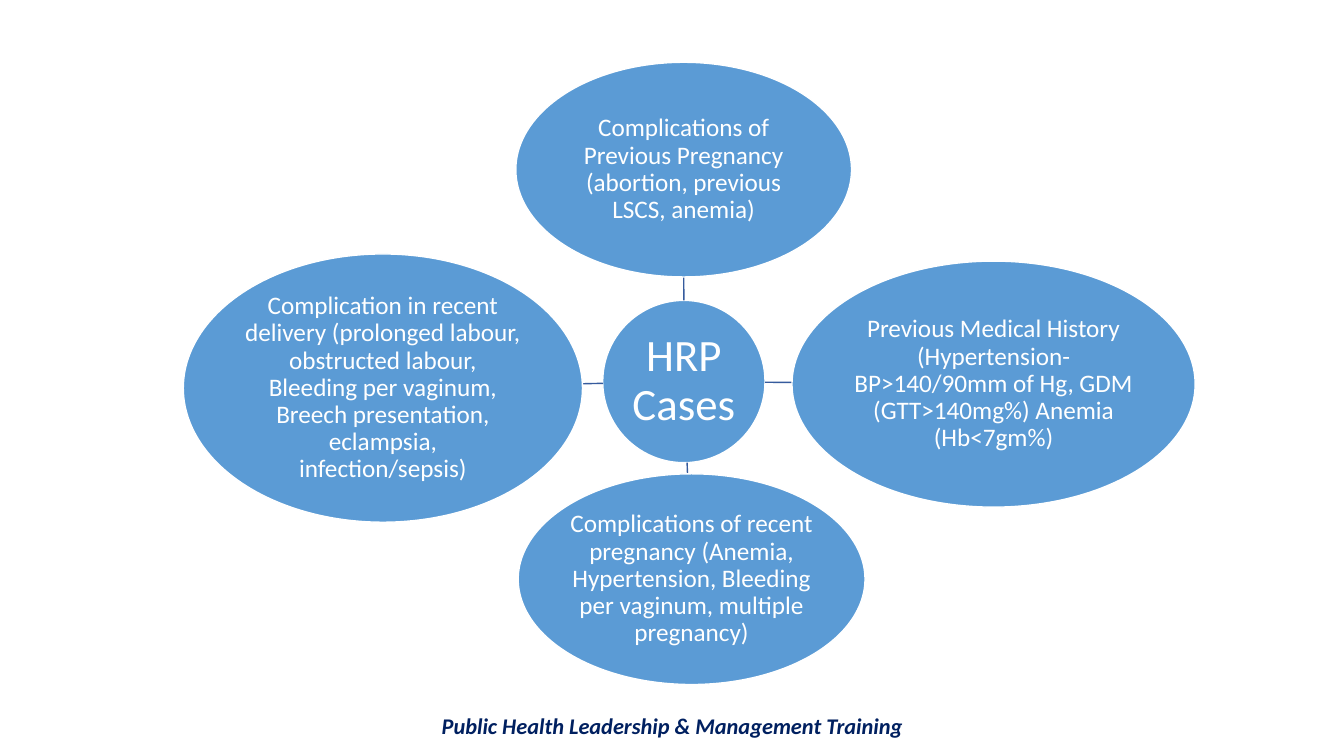
"""Build a slide of high-risk pregnancy cases as a hub with four satellites."""
from math import hypot

from lxml.etree import SubElement
from pptx import Presentation
from pptx.dml.color import RGBColor
from pptx.enum.shapes import MSO_CONNECTOR, MSO_SHAPE
from pptx.enum.text import MSO_ANCHOR, PP_ALIGN
from pptx.oxml.ns import qn
from pptx.util import Cm, Pt

COLORS = {"oval": "5B9BD5", "edge": "FFFFFF", "text": "FFFFFF", "link": "365B9D", "footer": "002060"}

HUB = ("HRP Cases", (15.19, 7.57, 4.09, 4.09))
SATELLITES = [
    ("Complications of Previous Pregnancy (abortion, previous LSCS, anemia)",
     (13.0, 1.57, 8.46, 5.41)),
    ("Previous Medical History (Hypertension-BP>140/90mm of Hg, GDM (GTT>140mg%) Anemia (Hb<7gm%)",
     (19.96, 6.58, 10.16, 6.2)),
    ("Complications of recent pregnancy (Anemia, Hypertension, Bleeding per vaginum, "
     "multiple pregnancy)",
     (13.06, 11.94, 8.74, 5.31)),
    ("Complication in recent delivery (prolonged labour, obstructed labour, Bleeding per vaginum, "
     "Breech presentation, eclampsia, infection/sepsis)",
     (4.62, 6.4, 10.06, 6.76)),
]
FOOTER = ("Public Health Leadership & Management Training", (2.34, 17.83, 29.21, 0.94))

HUB_FONT = {"name": "Calibri", "size": Pt(32)}
SATELLITE_FONT = {"name": "Calibri", "size": Pt(18)}
FOOTER_FONT = {"name": "Calibri", "size": Pt(16), "bold": True, "italic": True}
OVAL_FRAME = {"word_wrap": True, "vertical_anchor": MSO_ANCHOR.MIDDLE,
              **{f"margin_{side}": Cm(0.03) for side in ("left", "top", "right", "bottom")}}
OVAL_PARAGRAPH = {"alignment": PP_ALIGN.CENTER, "line_spacing": 0.9}


def apply(target, values):
    for key, value in values.items():
        setattr(target, key, value)


def rgb(key):
    return RGBColor.from_string(COLORS[key])


def write(sp, text, font, color, frame, paragraph):
    tf = sp.text_frame
    apply(tf, frame)
    p = tf.paragraphs[0]
    apply(p, paragraph)
    r = p.add_run()
    r.text = text
    apply(r.font, font)
    r.font.color.rgb = rgb(color)


def add_oval(s, text, box, font):
    sp = s.shapes.add_shape(MSO_SHAPE.OVAL, *map(Cm, box))
    sp.shadow.inherit = False
    sp.fill.solid()
    sp.fill.fore_color.rgb = rgb("oval")
    sp.line.color.rgb = rgb("edge")
    sp.line.width = Pt(1)
    write(sp, text, font, "text", OVAL_FRAME, OVAL_PARAGRAPH)


def center(box):
    x, y, w, h = box
    return x + w / 2, y + h / 2


def rim_point(box, toward):
    """Return where the ray from an oval's centre to a point crosses its rim."""
    cx, cy = center(box)
    dx, dy = toward[0] - cx, toward[1] - cy
    scale = hypot(dx / (box[2] / 2), dy / (box[3] / 2))
    return cx + dx / scale, cy + dy / scale


def add_link(s, box_a, box_b):
    ends = rim_point(box_a, center(box_b)) + rim_point(box_b, center(box_a))
    link = s.shapes.add_connector(MSO_CONNECTOR.STRAIGHT, *map(Cm, ends))
    link.line.color.rgb = rgb("link")
    link.line.width = Pt(1)
    SubElement(link._element.spPr, qn("a:effectLst"))


def main():
    prs = Presentation()
    prs.slide_width, prs.slide_height = Cm(33.87), Cm(19.05)
    s = prs.slides.add_slide(prs.slide_layouts[6])

    text, box = FOOTER
    write(s.shapes.add_textbox(*map(Cm, box)), text, FOOTER_FONT, "footer",
          {"word_wrap": True}, {"alignment": PP_ALIGN.CENTER})

    add_oval(s, *HUB, HUB_FONT)
    for text, box in SATELLITES:
        add_link(s, HUB[1], box)
        add_oval(s, text, box, SATELLITE_FONT)

    prs.save("out.pptx")


if __name__ == "__main__":
    main()
